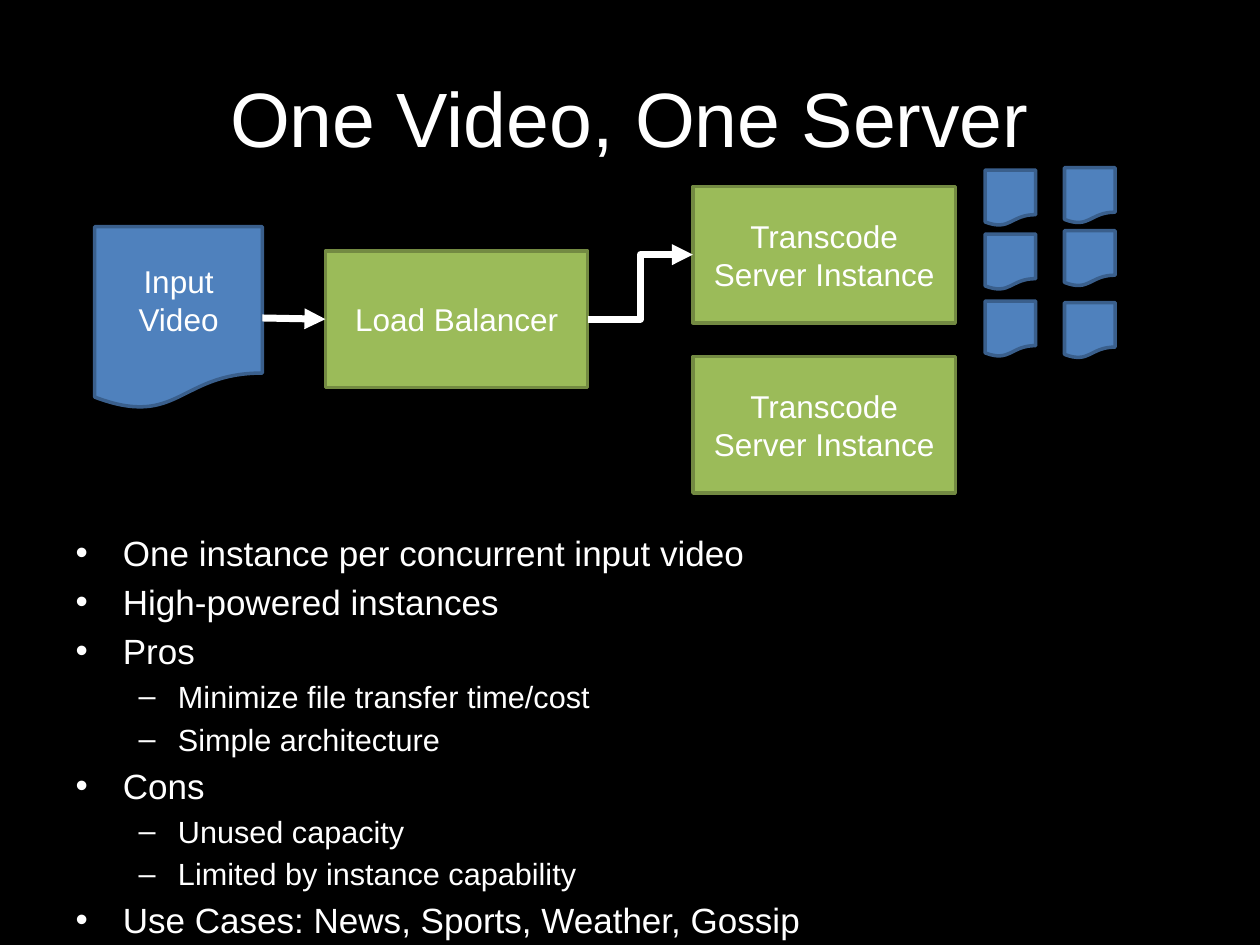
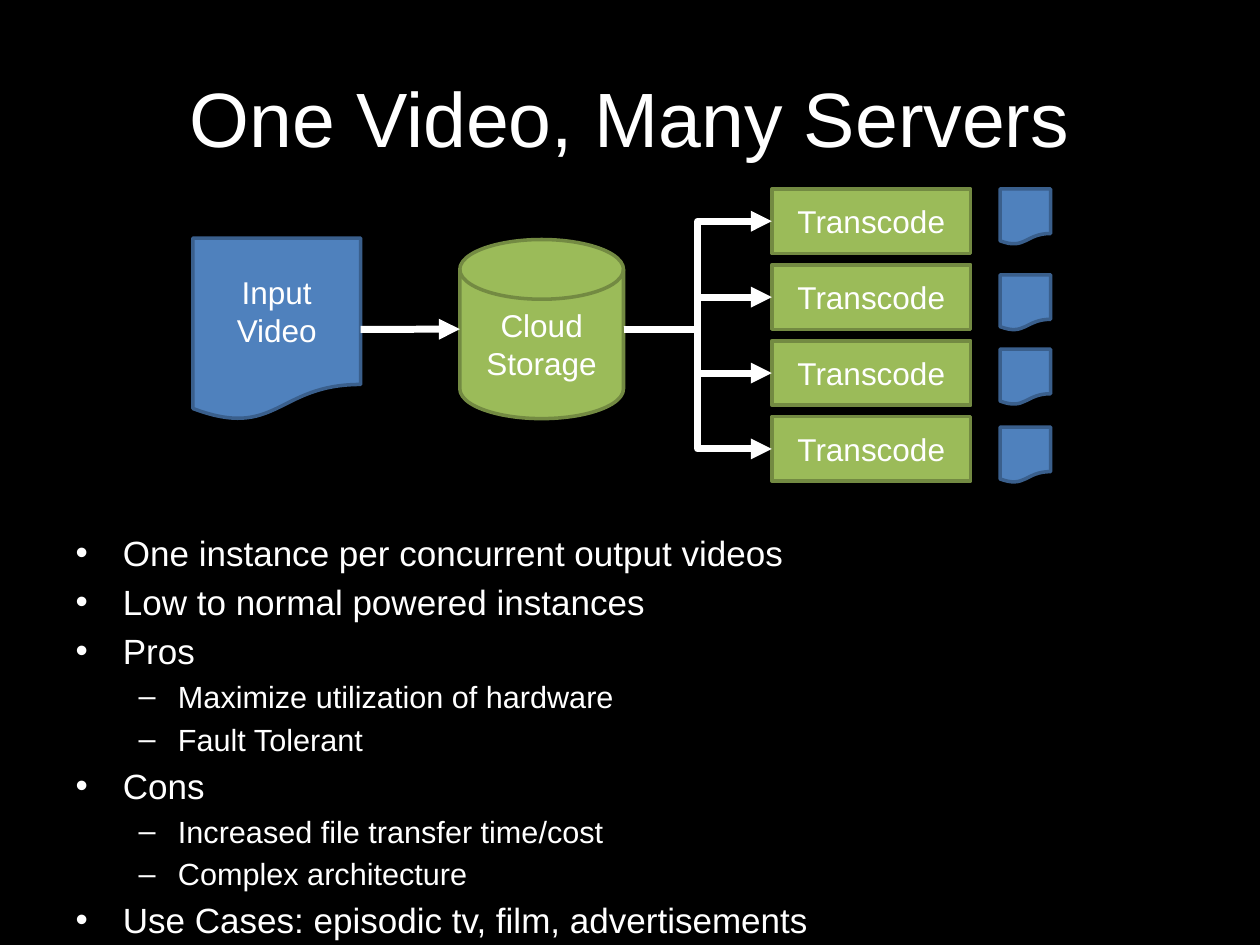
from lxml.etree import SubElement
from pptx import Presentation
from pptx.dml.color import RGBColor
from pptx.enum.shapes import MSO_CONNECTOR, MSO_SHAPE
from pptx.enum.text import MSO_ANCHOR, MSO_AUTO_SIZE, PP_ALIGN
from pptx.oxml.ns import qn
from pptx.util import Cm, Pt

FONT = "Arial"
BLACK, WHITE = "000000", "FFFFFF"
BLUE, BLUE_EDGE = "4F81BD", "3A5F8C"
GREEN, GREEN_EDGE = "9BBB59", "738A42"
LEVEL_SIZES = (20, 17.5)
LEFT, RIGHT = 1, 3

ONE_SERVER_POINTS = [
    (0, "One instance per concurrent input video"),
    (0, "High-powered instances"),
    (0, "Pros"),
    (1, "Minimize file transfer time/cost"),
    (1, "Simple architecture"),
    (0, "Cons"),
    (1, "Unused capacity"),
    (1, "Limited by instance capability"),
    (0, "Use Cases: News, Sports, Weather, Gossip"),
]
MANY_SERVERS_POINTS = [
    (0, "One instance per concurrent output videos"),
    (0, "Low to normal powered instances"),
    (0, "Pros"),
    (1, "Maximize utilization of hardware"),
    (1, "Fault Tolerant"),
    (0, "Cons"),
    (1, "Increased file transfer time/cost"),
    (1, "Complex architecture"),
    (0, "Use Cases: episodic tv, film, advertisements"),
]


def rgb(hex_color):
    """Turn a hex string into a colour."""
    return RGBColor.from_string(hex_color)


def set_font(p, size):
    """Apply the shared white font to a paragraph."""
    p.font.name = FONT
    p.font.size = Pt(size)
    p.font.color.rgb = rgb(WHITE)


def place(sp, x, y, w, h):
    """Move and size a placeholder, given centimetres."""
    sp.left, sp.top, sp.width, sp.height = Cm(x), Cm(y), Cm(w), Cm(h)


def add_slide(prs, title, points):
    """Add a slide with its title and two-level list."""
    s = prs.slides.add_slide(prs.slide_layouts[1])
    heading, body = s.shapes.title, s.placeholders[1]

    place(heading, 1.27, 0.76, 22.86, 3.18)
    tf = heading.text_frame
    tf.text = title
    tf.auto_size = MSO_AUTO_SIZE.NONE
    tf.vertical_anchor = MSO_ANCHOR.MIDDLE
    tf.paragraphs[0].alignment = PP_ALIGN.CENTER
    set_font(tf.paragraphs[0], 44)

    place(body, 1.27, 10.59, 22.86, 7.62)
    tf = body.text_frame
    tf.text = "\n".join(text for _, text in points)
    tf.auto_size = MSO_AUTO_SIZE.NONE
    for p, (level, _) in zip(tf.paragraphs, points):
        p.level = level
        set_font(p, LEVEL_SIZES[level])
    return s


def add_node(s, kind, x, y, w, h, fill, edge, text=""):
    """Add an outlined shape with an optional centred label."""
    sp = s.shapes.add_shape(kind, Cm(x), Cm(y), Cm(w), Cm(h))
    sp.shadow.inherit = False
    sp.fill.solid()
    sp.fill.fore_color.rgb = rgb(fill)
    sp.line.color.rgb = rgb(edge)
    sp.line.width = Pt(2)
    if text:
        tf = sp.text_frame
        tf.text = text
        tf.word_wrap = True
        tf.vertical_anchor = MSO_ANCHOR.MIDDLE
        for p in tf.paragraphs:
            p.alignment = PP_ALIGN.CENTER
            set_font(p, 18)
    return sp


def add_input_video(s, x, y):
    """Add the input video document."""
    return add_node(s, MSO_SHAPE.FLOWCHART_DOCUMENT, x, y, 3.38, 3.68,
                    BLUE, BLUE_EDGE, "Input Video")


def add_output_video(s, x, y):
    """Add a small output video document."""
    return add_node(s, MSO_SHAPE.FLOWCHART_DOCUMENT, x, y, 1.02, 1.12,
                    BLUE, BLUE_EDGE)


def add_server(s, x, y, w, h, text):
    """Add a green server box."""
    return add_node(s, MSO_SHAPE.RECTANGLE, x, y, w, h,
                    GREEN, GREEN_EDGE, text)


def add_arrow(s, source, target, kind=MSO_CONNECTOR.ELBOW):
    """Draw an arrow from a shape's right side to another's left side."""
    line = s.shapes.add_connector(
        kind,
        source.left + source.width, source.top + source.height // 2,
        target.left, target.top + target.height // 2)
    can = MSO_SHAPE.FLOWCHART_MAGNETIC_DISK
    if source.auto_shape_type != can:
        line.begin_connect(source, RIGHT)
    if target.auto_shape_type != can:
        line.end_connect(target, LEFT)
    line.line.color.rgb = rgb(WHITE)
    line.line.width = Pt(4)
    SubElement(line.line._get_or_add_ln(), qn("a:tailEnd"), type="triangle")
    SubElement(line._element.spPr, qn("a:effectLst"))


def build_one_server(prs):
    """Build the slide with one server per video."""
    s = add_slide(prs, "One Video, One Server", ONE_SERVER_POINTS)
    video = add_input_video(s, 1.91, 4.57)
    balancer = add_server(s, 6.56, 5.06, 5.29, 2.75, "Load Balancer")
    active, _ = [add_server(s, 13.97, y, 5.29, 2.75,
                            "Transcode Server Instance")
                 for y in (3.76, 7.19)]
    add_arrow(s, balancer, active)
    add_arrow(s, video, balancer, MSO_CONNECTOR.STRAIGHT)
    for x, tops in ((19.86, (3.43, 4.72, 6.07)), (21.46, (3.38, 4.65, 6.1))):
        for y in tops:
            add_output_video(s, x, y)


def build_many_servers(prs):
    """Build the slide with many servers per video."""
    s = add_slide(prs, "One Video, Many Servers", MANY_SERVERS_POINTS)
    video = add_input_video(s, 3.89, 4.8)
    storage = add_node(s, MSO_SHAPE.FLOWCHART_MAGNETIC_DISK, 9.27, 4.83,
                       3.3, 3.61, GREEN, GREEN_EDGE, "Cloud\nStorage")
    add_arrow(s, video, storage, MSO_CONNECTOR.STRAIGHT)
    for i, output_top in enumerate((3.81, 5.54, 7.04, 8.61)):
        server = add_server(s, 15.56, 3.81 + 1.53 * i, 4.01, 1.3, "Transcode")
        add_arrow(s, storage, server)
        add_output_video(s, 20.16, output_top)


def main():
    """Build and save the presentation."""
    prs = Presentation()
    prs.slide_width, prs.slide_height = Cm(25.4), Cm(19.05)
    fill = prs.slide_master.background.fill
    fill.solid()
    fill.fore_color.rgb = rgb(BLACK)
    build_one_server(prs)
    build_many_servers(prs)
    prs.save("out.pptx")


if __name__ == "__main__":
    main()
